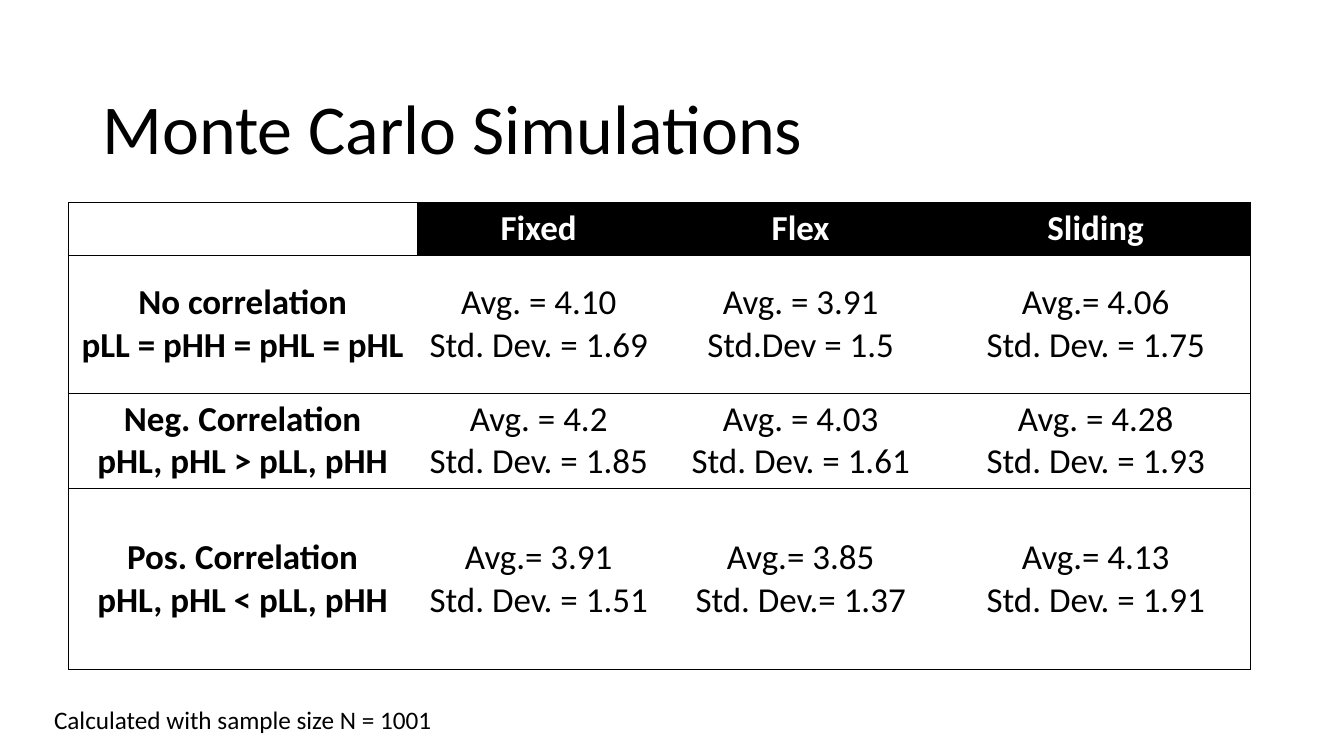
from dataclasses import dataclass

from lxml import etree
from pptx import Presentation
from pptx import util as u
from pptx.dml import color
from pptx.enum import text
from pptx.oxml import ns

PX = 9525  # EMU in one px
NO_GRID_STYLE = "{2D5ABB26-0587-4C30-8999-92F81FD0307C}"


@dataclass(frozen=True)
class Theme:
    font: str = "Calibri"
    ink: str = "000000"
    paper: str = "FFFFFF"
    title_size: int = 50
    table_size: int = 25
    note_size: int = 18
    rule_width: float = 0.5


@dataclass(frozen=True)
class Area:
    left: int
    top: int
    width: int
    height: int

    def emu(self) -> tuple:
        return tuple(u.Emu(v * PX) for v in (self.left, self.top, self.width, self.height))


@dataclass(frozen=True)
class Scenario:
    label: str
    results: tuple
    height: int


THEME = Theme()
TITLE_AREA = Area(88, 26, 1104, 139)
NOTE_AREA = Area(42, 666, 1094, 38)
TABLE_LEFT, TABLE_TOP = 65, 193
COLUMN_WIDTHS = (332, 232, 267, 295)
SCENARIOS = (
    Scenario("", ("Fixed", "Flex", "Sliding"), 50),
    Scenario("No correlation\npLL = pHH = pHL = pHL",
             ("Avg. = 4.10\nStd. Dev. = 1.69", "Avg. = 3.91\nStd.Dev = 1.5",
              "Avg.= 4.06\nStd. Dev. = 1.75"), 131),
    Scenario("Neg. Correlation\npHL, pHL > pLL, pHH",
             ("Avg. = 4.2\nStd. Dev. = 1.85", "Avg. = 4.03\nStd. Dev. = 1.61",
              "Avg. = 4.28\nStd. Dev. = 1.93"), 91),
    Scenario("Pos. Correlation\npHL, pHL < pLL, pHH",
             ("Avg.= 3.91\nStd. Dev. = 1.51", "Avg.= 3.85\nStd. Dev.= 1.37",
              "Avg.= 4.13\nStd. Dev. = 1.91"), 172),
)


def write(frame, words: str, size: int, ink: str, bold: bool = False, align=None) -> None:
    frame.text = words
    for para in frame.paragraphs:
        para.alignment = align
        para.font.size = u.Pt(size)
        for span in para.runs:
            span.font.name = THEME.font
            span.font.size = u.Pt(size)
            span.font.bold = bold
            span.font.color.rgb = color.RGBColor.from_string(ink)


def draw_borders(cell, sides: str) -> None:
    """Rule the given sides (from L, R, T, B); leave the others open."""
    properties = cell._tc.get_or_add_tcPr()
    for position, side in enumerate("LRTB"):
        line = etree.Element(ns.qn(f"a:ln{side}"), w=str(u.Pt(THEME.rule_width)))
        if side in sides:
            fill = etree.SubElement(line, ns.qn("a:solidFill"))
            etree.SubElement(fill, ns.qn("a:srgbClr"), val=THEME.ink)
        else:
            etree.SubElement(line, ns.qn("a:noFill"))
        properties.insert(position, line)


def draw_title(page) -> None:
    title = page.shapes.title
    title.left, title.top, title.width, title.height = TITLE_AREA.emu()
    frame = title.text_frame
    write(frame, "Monte Carlo Simulations", THEME.title_size, THEME.ink,
          align=text.PP_ALIGN.LEFT)
    frame.auto_size = text.MSO_AUTO_SIZE.NONE
    frame.vertical_anchor = text.MSO_ANCHOR.BOTTOM
    frame.paragraphs[0].line_spacing = 0.83


def draw_table(page) -> None:
    area = Area(TABLE_LEFT, TABLE_TOP, sum(COLUMN_WIDTHS), sum(s.height for s in SCENARIOS))
    table = page.shapes.add_table(len(SCENARIOS), len(COLUMN_WIDTHS), *area.emu()).table
    table.horz_banding = False
    table._tbl.tblPr.find(ns.qn("a:tableStyleId")).text = NO_GRID_STYLE
    for column, width in zip(table.columns, COLUMN_WIDTHS):
        column.width = u.Emu(width * PX)

    last = len(COLUMN_WIDTHS) - 1
    for r, scenario in enumerate(SCENARIOS):
        table.rows[r].height = u.Emu(scenario.height * PX)
        for c, words in enumerate((scenario.label, *scenario.results)):
            cell = table.cell(r, c)
            header = r == 0 and c > 0
            write(cell.text_frame, words, THEME.table_size,
                  THEME.paper if header else THEME.ink,
                  bold=r == 0 or c == 0, align=text.PP_ALIGN.CENTER)
            cell.vertical_anchor = text.MSO_ANCHOR.TOP if r == 0 else text.MSO_ANCHOR.MIDDLE
            if header:
                cell.fill.solid()
                cell.fill.fore_color.rgb = color.RGBColor.from_string(THEME.ink)
            else:
                cell.fill.background()
            draw_borders(cell, "TB" + "L" * (c == 0) + "R" * (c == last))


def draw_note(page) -> None:
    frame = page.shapes.add_textbox(*NOTE_AREA.emu()).text_frame
    frame.word_wrap = True
    write(frame, "Calculated with sample size N = 1001", THEME.note_size, THEME.ink)


def main() -> None:
    deck = Presentation()
    deck.slide_width, deck.slide_height = u.Emu(1280 * PX), u.Emu(720 * PX)
    page = deck.slides.add_slide(deck.slide_layouts.get_by_name("Title Only"))
    draw_title(page)
    draw_table(page)
    draw_note(page)
    deck.save("out.pptx")


if __name__ == "__main__":
    main()
